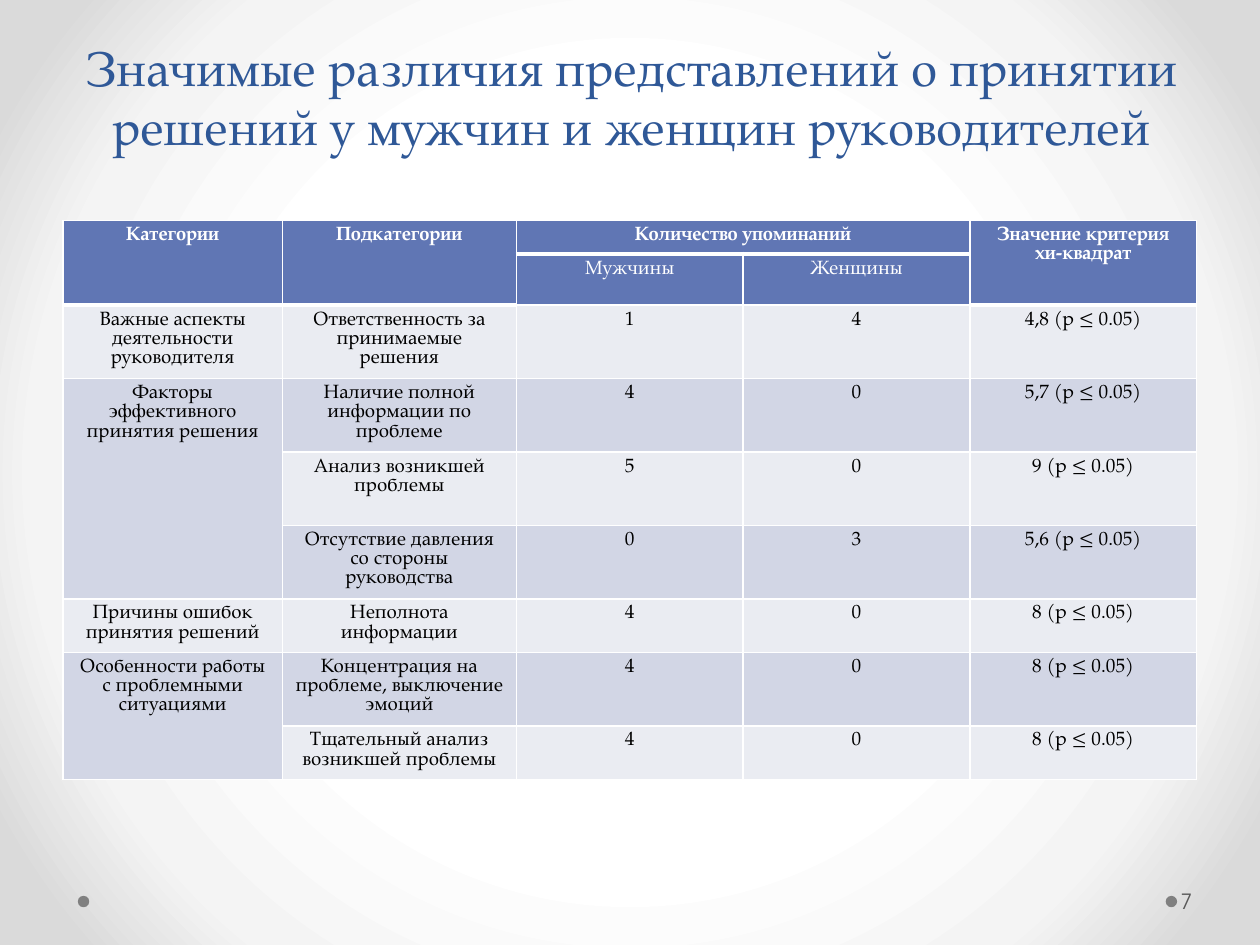
"""Build the slide comparing decision-making views of male and female managers."""
from lxml import etree
from pptx import Presentation
from pptx import util as u
from pptx.dml.color import RGBColor
from pptx.enum import shapes, text
from pptx.oxml import parse_xml
from pptx.oxml.ns import nsdecls, qn

THEME = {
    "heading": "TeX Gyre Pagella", "plain": "TeX Gyre Adventor",
    "title": "2F5897", "header": "6076B4", "bands": ("EAECF2", "D2D6E5"),
    "white": "FFFFFF", "black": "000000", "dot": "808080", "number": "595959",
    "title_size": 28, "cell_size": 11, "number_size": 12,
    "backdrop": ((50, "FFFFFF"), (76, "F4F4F4"), (92, "DADADA")),
}
TITLE = "Значимые различия представлений о принятии решений у мужчин и женщин руководителей"
HEADERS = [
    ("Категории", "Подкатегории", "Количество упоминаний", None, "Значение критерия хи-квадрат"),
    (None, None, "Мужчины", "Женщины", None),
]
FINDINGS = [
    ("Важные аспекты деятельности руководителя", "Ответственность за принимаемые решения", 1, 4, "4,8"),
    ("Факторы эффективного принятия решения", "Наличие полной информации по проблеме", 4, 0, "5,7"),
    (None, "Анализ возникшей проблемы", 5, 0, "9"),
    (None, "Отсутствие давления со стороны руководства", 0, 3, "5,6"),
    ("Причины ошибок принятия решений", "Неполнота информации", 4, 0, "8"),
    ("Особенности работы с проблемными ситуациями", "Концентрация на проблеме, выключение эмоций", 4, 0, "8"),
    (None, "Тщательный анализ возникшей проблемы", 4, 0, "8"),
]
MERGES = [((0, 0), (1, 0)), ((0, 1), (1, 1)), ((0, 2), (0, 3)), ((0, 4), (1, 4)),
          ((3, 0), (5, 0)), ((7, 0), (8, 0))]
COLUMNS = (4.42, 4.72, 4.57, 4.57, 4.57)
ROWS = (0.68, 1.01, 1.48, 1.48, 1.48, 1.48, 1.08, 1.48, 1.08)
SIGNIFICANCE = " (p ≤ 0.05)"
DOTS = (1.57, 23.5)


def add_text(para, words, font, size, color, bold=False):
    span = para.add_run()
    span.text = words
    span.font.name = font
    span.font.size = u.Pt(size)
    span.font.bold = bold
    span.font.color.rgb = RGBColor.from_string(color)


def paint_background(page):
    stops = "".join(f'<a:gs pos="{place * 1000}"><a:srgbClr val="{color}"/></a:gs>'
                    for place, color in THEME["backdrop"])
    page.background.fill.solid()
    properties = page.background.fill._xPr
    properties.replace(properties[0], parse_xml(
        f'<a:gradFill {nsdecls("a")} rotWithShape="1"><a:gsLst>{stops}</a:gsLst>'
        '<a:path path="circle"><a:fillToRect l="50000" t="50000" r="50000" b="50000"/>'
        '</a:path></a:gradFill>'))


def format_cell(cell, fill, bottom):
    properties = cell._tc.get_or_add_tcPr()
    for side in ("lnL", "lnR", "lnT", "lnB"):
        width = bottom if side == "lnB" else 1
        line = etree.SubElement(properties, qn(f"a:{side}"), w=str(u.Pt(width)))
        paint = etree.SubElement(line, qn("a:solidFill"))
        etree.SubElement(paint, qn("a:srgbClr"), val=THEME["white"])
    cell.fill.solid()
    cell.fill.fore_color.rgb = RGBColor.from_string(fill)


def add_findings(page):
    rows = HEADERS + [(*finding[:-1], finding[-1] + SIGNIFICANCE) for finding in FINDINGS]
    frame = page.shapes.add_table(len(rows), len(COLUMNS), u.Cm(1.27), u.Cm(4.44),
                                  u.Cm(sum(COLUMNS)), u.Cm(sum(ROWS)))
    table = frame.table
    for column, width in zip(table.columns, COLUMNS):
        column.width = u.Cm(width)
    for row, height in zip(table.rows, ROWS):
        row.height = u.Cm(height)
    for r, values in enumerate(rows):
        heading = r < len(HEADERS)
        fill = THEME["header"] if heading else THEME["bands"][r % 2]
        for c, value in enumerate(values):
            cell = table.cell(r, c)
            thick = r == 0 or (heading and value is None)
            format_cell(cell, fill, 3 if thick else 1)
            if value is None:
                continue
            para = cell.text_frame.paragraphs[0]
            para.alignment = text.PP_ALIGN.CENTER
            para.line_spacing = u.Pt(THEME["cell_size"])
            add_text(para, str(value), THEME["heading"], THEME["cell_size"],
                     THEME["white" if heading else "black"], r == 0)
    for first, last in MERGES:
        table.cell(*first).merge(table.cell(*last))


def add_title(page):
    title = page.shapes.title
    title.left, title.top, title.width, title.height = (u.Cm(n) for n in (1.3, 0.53, 22.86, 2.72))
    frame = title.text_frame
    frame.word_wrap = True
    frame.auto_size = text.MSO_AUTO_SIZE.NONE
    frame.vertical_anchor = text.MSO_ANCHOR.BOTTOM
    para = frame.paragraphs[0]
    para.alignment = text.PP_ALIGN.CENTER
    add_text(para, TITLE, THEME["heading"], THEME["title_size"], THEME["title"])


def add_footer(page):
    for left in DOTS:
        dot = page.shapes.add_shape(shapes.MSO_SHAPE.OVAL, u.Cm(left), u.Cm(18.06), u.Cm(0.23), u.Cm(0.23))
        dot.shadow.inherit = False
        dot.fill.solid()
        dot.fill.fore_color.rgb = RGBColor.from_string(THEME["dot"])
        dot.line.fill.background()
    box = page.shapes.add_textbox(u.Cm(23.72), u.Cm(17.65), u.Cm(1.55), u.Cm(1.02))
    frame = box.text_frame
    frame.word_wrap = True
    frame.vertical_anchor = text.MSO_ANCHOR.MIDDLE
    frame.margin_left = u.Cm(0.08)
    frame.margin_right = u.Cm(0.13)
    add_text(frame.paragraphs[0], "7", THEME["plain"], THEME["number_size"], THEME["number"])


def main():
    deck = Presentation()
    deck.slide_width, deck.slide_height = u.Cm(25.4), u.Cm(19.05)
    page = deck.slides.add_slide(deck.slide_layouts[5])
    paint_background(page)
    add_title(page)
    add_findings(page)
    add_footer(page)
    deck.save("out.pptx")


if __name__ == "__main__":
    main()
